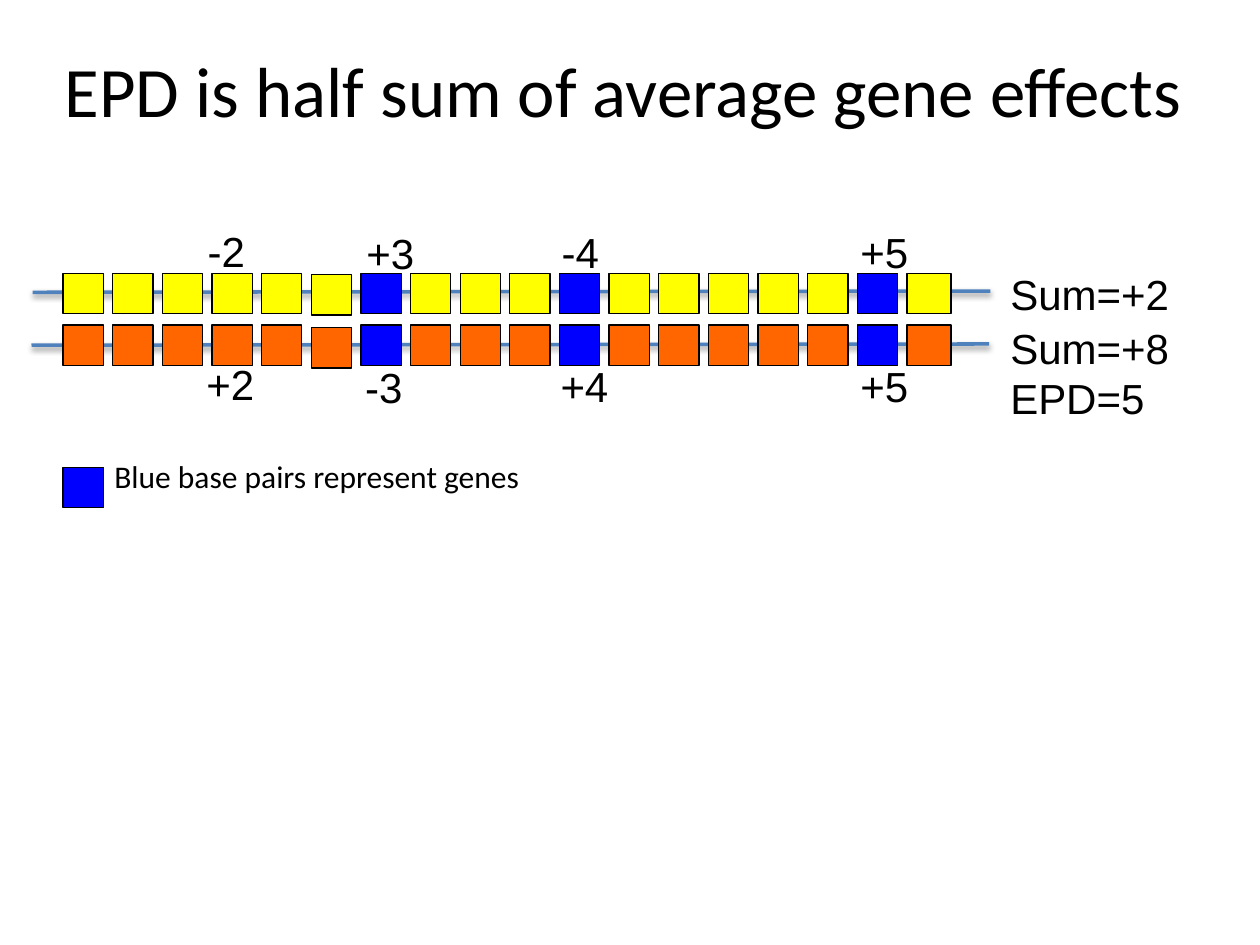
from lxml import etree
from pptx import Presentation
from pptx.dml.color import RGBColor
from pptx.enum.shapes import MSO_CONNECTOR, MSO_SHAPE
from pptx.enum.text import MSO_ANCHOR, PP_ALIGN
from pptx.oxml import parse_xml
from pptx.util import Inches, Pt

TITLE = "EPD is half sum of average gene effects"
LEGEND = "Blue base pairs represent genes"
GENE, BLACK, STRAND = "0000FF", "000000", "4F81BD"
# square top, square colour, line start, line end, drop of the uneven square
STRANDS = [
    (2.17, "FFFF00", (0.26, 2.32), (7.86, 2.31), 0.01),
    (2.58, "FF6600", (0.25, 2.74), (7.85, 2.73), 0.02),
]
GENES = (6, 10, 16)
COUNT, LEFT, PITCH, SIDE, LAST_WIDTH = 18, 0.5, 0.394, 0.32, 0.35
UNEVEN = 5
# left, top, width, lines
LABELS = [
    (1.55, 1.74, 0.5, ["-2"]),
    (2.81, 1.76, 0.59, ["+3"]),
    (4.36, 1.75, 0.5, ["-4"]),
    (6.73, 1.75, 0.59, ["+5"]),
    (1.54, 2.8, 0.59, ["+2"]),
    (2.8, 2.82, 0.5, ["-3"]),
    (4.35, 2.81, 0.59, ["+4"]),
    (6.73, 2.81, 0.59, ["+5"]),
    (7.92, 2.08, 1.47, ["Sum=+2"]),
    (7.92, 2.51, 1.47, ["Sum=+8", "EPD=5"]),
]
SHADOW = (
    '<a:effectLst xmlns:a="http://schemas.openxmlformats.org/drawingml/2006/main">'
    '<a:outerShdw blurRad="39370" dist="20320" dir="5400000" rotWithShape="0">'
    '<a:srgbClr val="000000"><a:alpha val="38000"/></a:srgbClr>'
    '</a:outerShdw></a:effectLst>'
)


def color(hex_code):
    return RGBColor.from_string(hex_code)


def add_run(p, text, size, font):
    r = p.add_run()
    r.text = text
    r.font.size, r.font.name = Pt(size), font
    r.font.color.rgb = color(BLACK)


def add_strand(s, start, end):
    line = s.shapes.add_connector(
        MSO_CONNECTOR.STRAIGHT, *(Inches(v) for v in start + end))
    line.line.color.rgb = color(STRAND)
    line.line.width = Pt(2)
    line._element.spPr.append(parse_xml(SHADOW))


def add_square(s, left, top, fill, width=SIDE):
    sp = s.shapes.add_shape(MSO_SHAPE.RECTANGLE, Inches(left), Inches(top),
                            Inches(width), Inches(SIDE))
    sp.shadow.inherit = False
    sp.fill.solid()
    sp.fill.fore_color.rgb = color(fill)
    sp.line.color.rgb = color(BLACK)
    sp.line.width = Pt(0.75)


def add_text(s, left, top, width, height, lines, size, font, wrap):
    box = s.shapes.add_textbox(*(Inches(v) for v in (left, top, width, height)))
    tf = box.text_frame
    tf.word_wrap = wrap
    for i, text in enumerate(lines):
        p = tf.add_paragraph() if i else tf.paragraphs[0]
        add_run(p, text, size, font)


prs = Presentation()
prs.slide_width, prs.slide_height = Inches(10), Inches(7.5)
s = prs.slides.add_slide(prs.slide_layouts[5])

for _, _, start, end, _ in STRANDS:
    add_strand(s, start, end)

title = s.shapes.title
title.left, title.top = Inches(0.25), Inches(0.08)
title.width, title.height = Inches(9.4), Inches(1.25)
title.text_frame.vertical_anchor = MSO_ANCHOR.MIDDLE
p = title.text_frame.paragraphs[0]
p.alignment = PP_ALIGN.CENTER
add_run(p, TITLE, 40.5, "Calibri")

for top, fill, _, _, drop in STRANDS:
    for i in range(COUNT):
        add_square(s, LEFT + i * PITCH, top + (drop if i == UNEVEN else 0),
                   GENE if i in GENES else fill,
                   LAST_WIDTH if i == COUNT - 1 else SIDE)

add_square(s, LEFT, 3.71, GENE)
add_text(s, 0.81, 3.58, 5, 0.4, [LEGEND], 18, "Calibri", True)
for left, top, width, lines in LABELS:
    add_text(s, left, top, width, 0.1 + 0.4 * len(lines), lines, 24, "Arial", False)

prs.save("out.pptx")
